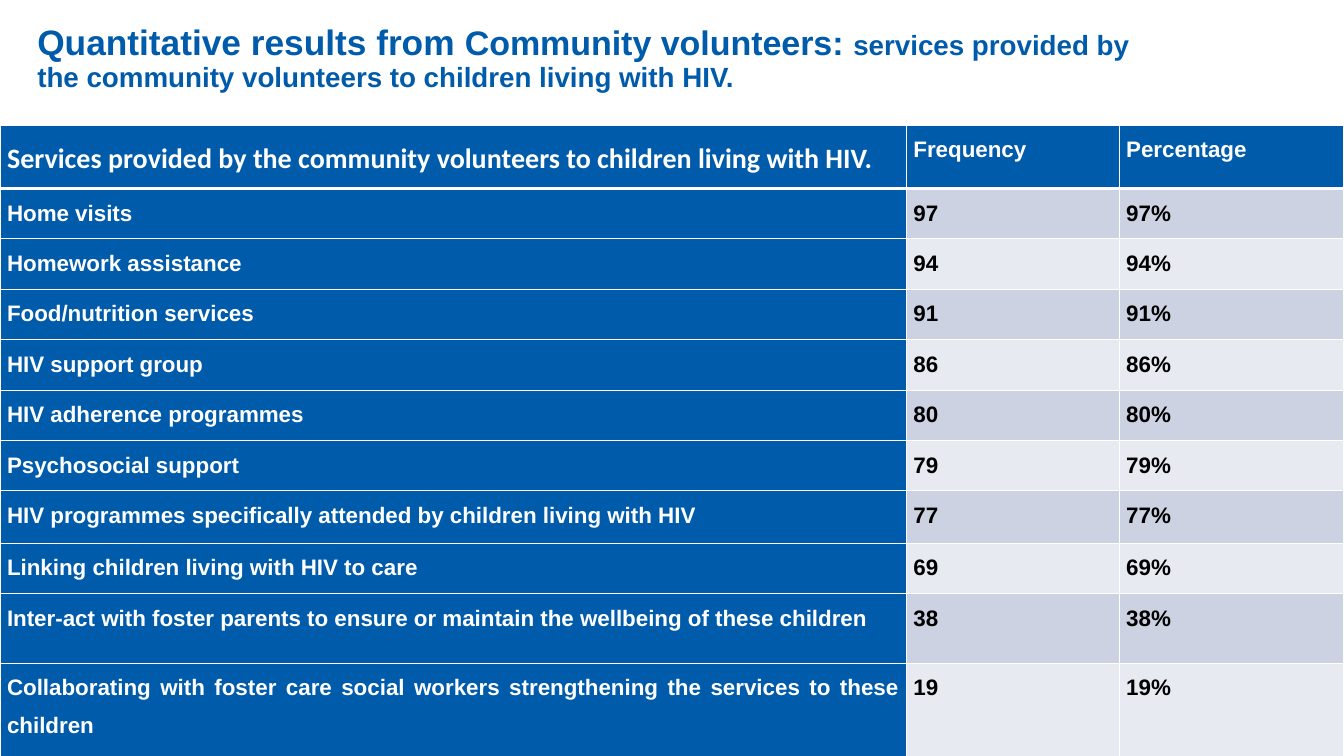
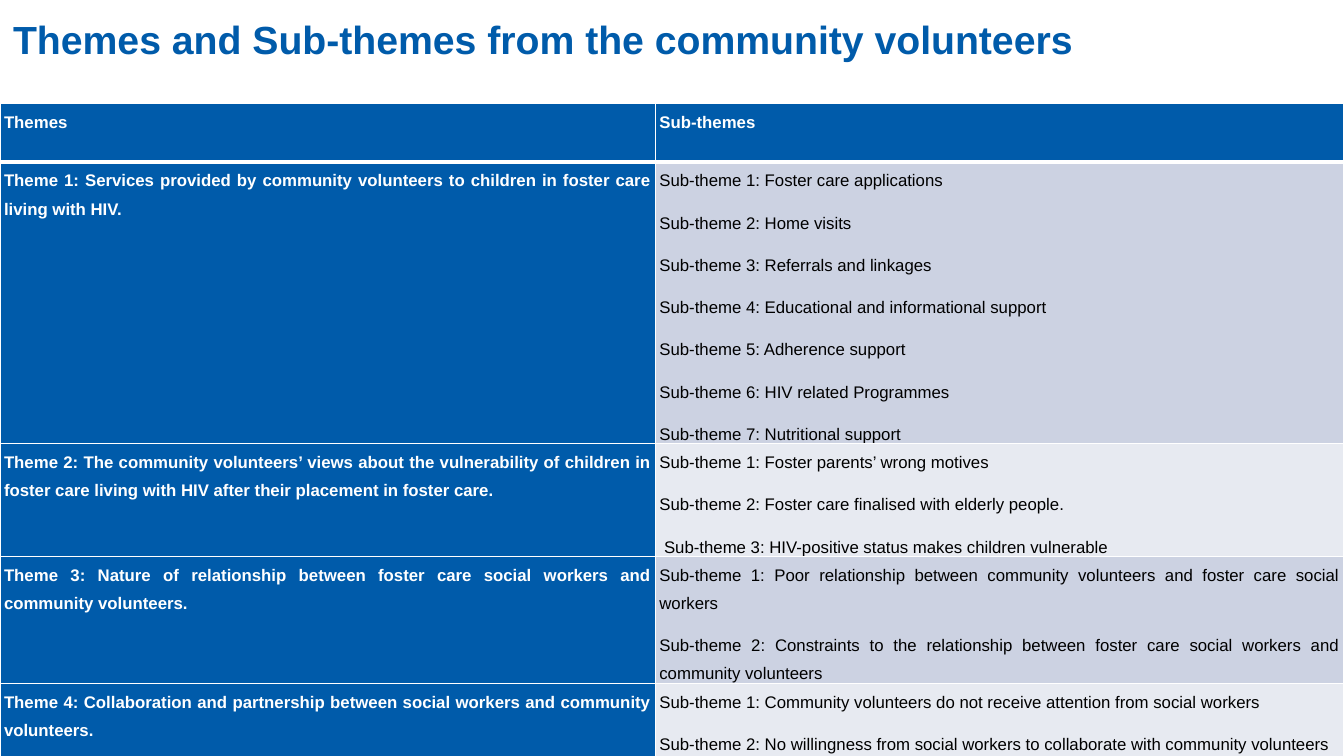
from pptx import Presentation
from pptx.dml.color import RGBColor
from pptx.enum.text import MSO_ANCHOR, MSO_AUTO_SIZE, PP_ALIGN
from pptx.oxml import parse_xml
from pptx.oxml.ns import nsdecls
from pptx.util import Inches, Pt

# Shared style
BLUE = RGBColor(0x00, 0x5B, 0xAA)
WHITE = RGBColor(0xFF, 0xFF, 0xFF)
BLACK = RGBColor(0x00, 0x00, 0x00)
BANDS = (RGBColor(0xCC, 0xD2, 0xE2), RGBColor(0xE7, 0xEA, 0xF1))
FONT = "Arial"

# Slide 1 content: service and number of volunteers out of 100
SERVICE_TITLE = [
    ("Quantitative results from ", 25.2),
    ("Community volunteers: ", 24.3),
    ("services provided by the community volunteers to children living with HIV.", 19.8),
]
SERVICE_HEAD = (
    "Services provided by the community volunteers to children living with HIV.",
    "Frequency",
    "Percentage",
)
SERVICES = [
    ("Home visits", 97),
    ("Homework assistance", 94),
    ("Food/nutrition services", 91),
    ("HIV support group", 86),
    ("HIV adherence programmes", 80),
    ("Psychosocial support", 79),
    ("HIV programmes specifically attended by children living with HIV", 77),
    ("Linking children living with HIV to care", 69),
    ("Inter-act with foster parents to ensure or maintain the wellbeing of these children", 38),
    ("Collaborating with foster care social workers strengthening the services to these children", 19),
]

# Slide 2 content: theme and its sub-themes, one per line
THEME_TITLE = [("Themes and Sub-themes from the community volunteers", 28)]
THEMES = [
    ("Themes", ["Sub-themes"]),
    ("Theme 1: Services provided by community volunteers to children in foster care living with HIV.", [
        "Sub-theme 1: Foster care applications",
        "Sub-theme 2: Home visits",
        "Sub-theme 3: Referrals and linkages",
        "Sub-theme 4: Educational and informational support",
        "Sub-theme 5: Adherence support",
        "Sub-theme 6: HIV related Programmes",
        "Sub-theme 7: Nutritional support",
    ]),
    ("Theme 2: The community volunteers’ views about the vulnerability of children in foster care "
     "living with HIV after their placement in foster care.", [
        "Sub-theme 1: Foster parents’ wrong motives",
        "Sub-theme 2: Foster care finalised with elderly people.",
        " Sub-theme 3: HIV-positive status makes children vulnerable",
    ]),
    ("Theme 3: Nature of relationship between foster care social workers and community volunteers.", [
        "Sub-theme 1: Poor relationship between community volunteers and foster care social workers",
        "Sub-theme 2: Constraints to the relationship between foster care social workers and "
        "community volunteers",
    ]),
    ("Theme 4: Collaboration and partnership between social workers and community volunteers.", [
        "Sub-theme 1: Community volunteers do not receive attention from social workers",
        "Sub-theme 2: No willingness from social workers to collaborate with community volunteers",
    ]),
]


def add_slide(deck, runs, left, top):
    """Add a slide with its title made of (text, size) runs."""
    slide = deck.slides.add_slide(deck.slide_layouts[5])
    title = slide.shapes.title
    title.left, title.top = Inches(left), Inches(top)
    title.width, title.height = Inches(11.5), Inches(0.69)
    frame = title.text_frame
    frame.word_wrap = True
    frame.auto_size = MSO_AUTO_SIZE.NONE
    frame.vertical_anchor = MSO_ANCHOR.TOP
    para = frame.paragraphs[0]
    para.alignment = PP_ALIGN.LEFT
    para.line_spacing = 0.9
    para.font.name, para.font.bold = FONT, True
    para.font.color.rgb = BLUE
    for text, size in runs:
        run = para.add_run()
        run.text = text
        run.font.size = Pt(size)
    return slide


def set_lines(cell, head):
    """Draw white borders, thicker under the header row."""
    props = cell._tc.get_or_add_tcPr()
    for side in "LRTB":
        width = Pt(3 if head and side == "B" else 1)
        props.append(parse_xml(
            f'<a:ln{side} {nsdecls("a")} w="{width}"><a:solidFill>'
            f'<a:srgbClr val="{WHITE}"/></a:solidFill></a:ln{side}>'))


def fill_cell(cell, lines, fill, color, size, bold, inset):
    cell.margin_left = cell.margin_right = Inches(inset)
    cell.margin_top = cell.margin_bottom = 0
    cell.fill.solid()
    cell.fill.fore_color.rgb = fill
    frame = cell.text_frame
    frame.text = "\n".join(lines)
    for para in frame.paragraphs:
        para.alignment = PP_ALIGN.JUSTIFY
        para.line_spacing = 1.5
        para.space_after = Pt(10)
        font = para.font
        font.name, font.size, font.bold = FONT, Pt(size), bold
        font.color.rgb = color


def add_grid(slide, rows, top, widths, heights, size, bold, inset):
    """Add a full-width table: blue header and first column, banded body."""
    grid = slide.shapes.add_table(
        len(rows), len(widths), 0, Inches(top),
        Inches(sum(widths)), Inches(sum(heights))).table
    grid.horz_banding = False
    for col, width in zip(grid.columns, widths):
        col.width = Inches(width)
    for r, (row, height) in enumerate(zip(rows, heights)):
        grid.rows[r].height = Inches(height)
        for c, lines in enumerate(row):
            cell = grid.cell(r, c)
            blue = r == 0 or c == 0
            set_lines(cell, r == 0)
            fill_cell(cell, lines, BLUE if blue else BANDS[(r - 1) % 2],
                      WHITE if blue else BLACK, size, blue or bold, inset)
    return grid


def main():
    deck = Presentation()
    deck.slide_width, deck.slide_height = Inches(13.33), Inches(7.5)

    # Services table
    slide = add_slide(deck, SERVICE_TITLE, 0.27, 0.2)
    rows = [[[text] for text in SERVICE_HEAD]]
    rows += [[[name], [str(count)], [f"{count}%"]] for name, count in SERVICES]
    heights = [0.63] + [0.5] * 6 + [0.52, 0.5, 0.69, 1.06]
    grid = add_grid(slide, rows, 1.24, (8.99, 2.11, 2.23), heights, 16, True, 0.07)
    font = grid.cell(0, 0).text_frame.paragraphs[0].font
    font.name, font.size = "Calibri", Pt(20)

    # Themes table
    slide = add_slide(deck, THEME_TITLE, 0.03, 0.15)
    rows = [[[theme], subs] for theme, subs in THEMES]
    add_grid(slide, rows, 1.03, (6.5, 6.83), (0.58, 2.3, 0.89, 0.78, 1.91), 12, False, 0.04)

    deck.save("out.pptx")


if __name__ == "__main__":
    main()
